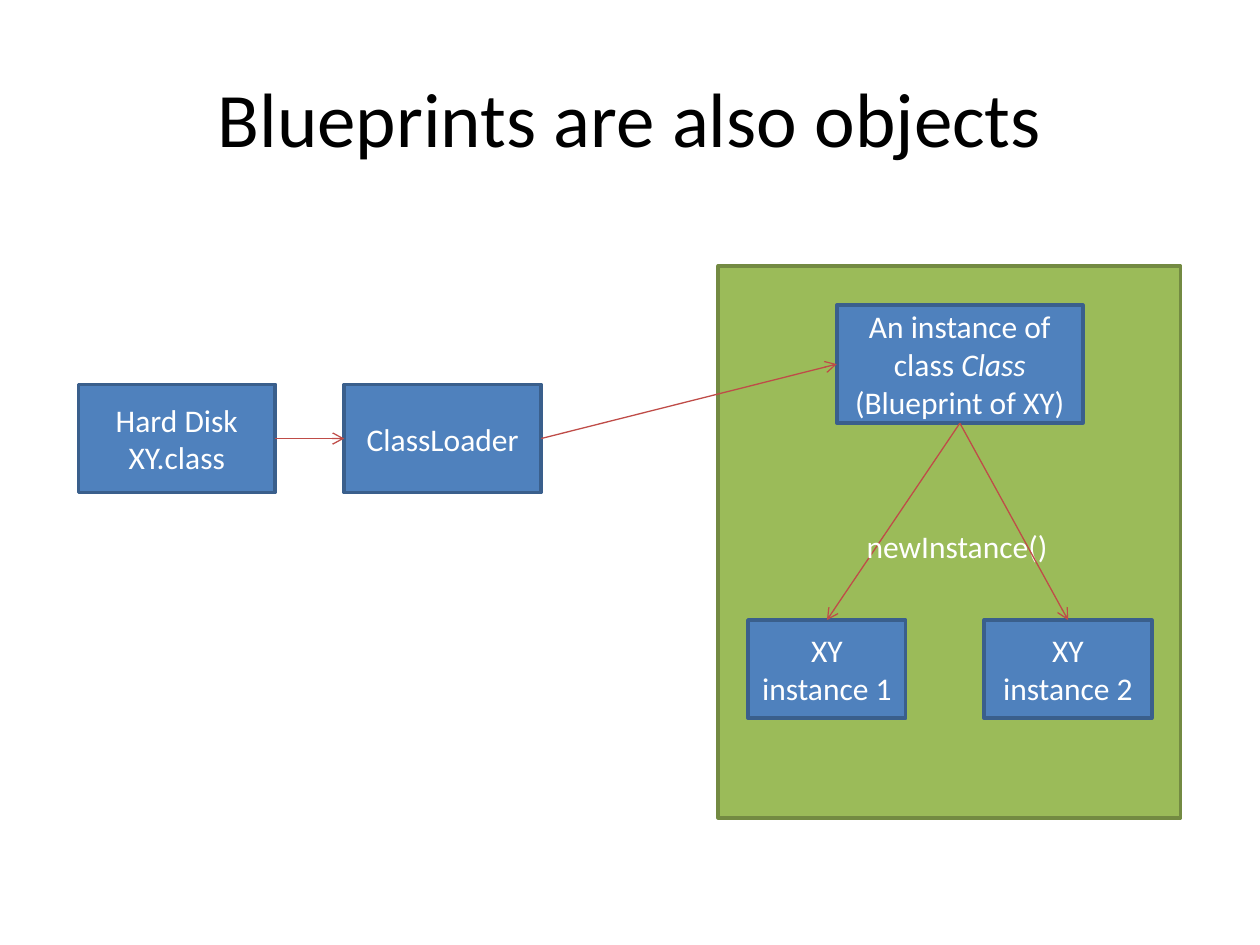
from dataclasses import dataclass

from lxml.etree import SubElement
from pptx import Presentation
from pptx.dml.color import RGBColor
from pptx.enum.shapes import MSO_CONNECTOR, MSO_SHAPE
from pptx.enum.text import MSO_ANCHOR, PP_ALIGN
from pptx.oxml.ns import qn
from pptx.shapes.autoshape import Shape
from pptx.slide import Slide
from pptx.util import Cm, Pt

FONT = "Calibri"
COLORS = {
    "title": "000000",
    "text": "FFFFFF",
    "box": "4F81BD",
    "box_line": "3A5F8C",
    "panel": "9BBB59",
    "panel_line": "738A42",
    "arrow": "BF4C48",
}
TOP, LEFT, BOTTOM, RIGHT = range(4)


@dataclass(frozen=True)
class Area:
    """A rectangle in centimetres."""
    left: float
    top: float
    width: float
    height: float

    def lengths(self) -> tuple[Cm, Cm, Cm, Cm]:
        return Cm(self.left), Cm(self.top), Cm(self.width), Cm(self.height)


@dataclass(frozen=True)
class Box:
    name: str
    area: Area
    text: str


@dataclass(frozen=True)
class Arrow:
    start: str
    start_side: int
    end: str
    end_side: int


TITLE_AREA = Area(1.27, 0.76, 22.86, 3.18)
PANEL_AREA = Area(14.48, 5.36, 9.32, 11.13)
LABEL_AREA = Area(17.22, 10.49, 4.22, 1.02)
BOXES = [
    Box("disk", Area(1.58, 7.75, 3.97, 2.18), "Hard Disk\nXY.class"),
    Box("loader", Area(6.94, 7.75, 3.97, 2.18), "ClassLoader"),
    Box("blueprint", Area(16.87, 6.15, 4.96, 2.38),
        "An instance of class *Class*\n(Blueprint of XY)"),
    Box("first", Area(15.08, 12.5, 3.18, 1.98), "XY instance 1"),
    Box("second", Area(19.84, 12.5, 3.38, 1.98), "XY instance 2"),
]
LOADING_ARROWS = [
    Arrow("disk", RIGHT, "loader", LEFT),
    Arrow("loader", RIGHT, "blueprint", LEFT),
]
FIRST_ARROW = Arrow("blueprint", BOTTOM, "first", TOP)
SECOND_ARROW = Arrow("blueprint", BOTTOM, "second", TOP)


def color(name: str) -> RGBColor:
    return RGBColor.from_string(COLORS[name])


def write_text(shape: Shape, text: str, *, size: float = 18,
               color_name: str = "text", align: PP_ALIGN = PP_ALIGN.CENTER,
               anchor: MSO_ANCHOR = MSO_ANCHOR.MIDDLE, wrap: bool = True) -> None:
    """Write one paragraph per line; words between asterisks are italic."""
    frame = shape.text_frame
    frame.word_wrap = wrap
    frame.vertical_anchor = anchor
    for index, line in enumerate(text.split("\n")):
        paragraph = frame.add_paragraph() if index else frame.paragraphs[0]
        paragraph.alignment = align
        for part_index, part in enumerate(line.split("*")):
            if not part:
                continue
            run = paragraph.add_run()
            run.text = part
            run.font.name = FONT
            run.font.size = Pt(size)
            run.font.italic = part_index % 2 == 1
            run.font.color.rgb = color(color_name)


def add_rectangle(slide: Slide, area: Area, fill: str, line: str) -> Shape:
    shape = slide.shapes.add_shape(MSO_SHAPE.RECTANGLE, *area.lengths())
    shape.shadow.inherit = False
    shape.fill.solid()
    shape.fill.fore_color.rgb = color(fill)
    shape.line.color.rgb = color(line)
    shape.line.width = Pt(2)
    return shape


def add_box(slide: Slide, box: Box) -> Shape:
    shape = add_rectangle(slide, box.area, "box", "box_line")
    write_text(shape, box.text)
    return shape


def add_arrow(slide: Slide, arrow: Arrow, shapes: dict[str, Shape]) -> None:
    connector = slide.shapes.add_connector(MSO_CONNECTOR.STRAIGHT, 0, 0, 0, 0)
    connector.begin_connect(shapes[arrow.start], arrow.start_side)
    connector.end_connect(shapes[arrow.end], arrow.end_side)
    connector.line.color.rgb = color("arrow")
    connector.line.width = Pt(0.75)
    SubElement(connector.line._get_or_add_ln(), qn("a:tailEnd"), type="arrow")
    SubElement(connector._element.spPr, qn("a:effectLst"))


def main() -> None:
    presentation = Presentation()
    presentation.slide_width = Cm(25.4)
    presentation.slide_height = Cm(19.05)
    slide = presentation.slides.add_slide(presentation.slide_layouts[6])

    title = slide.shapes.add_textbox(*TITLE_AREA.lengths())
    write_text(title, "Blueprints are also objects", size=44, color_name="title")

    add_rectangle(slide, PANEL_AREA, "panel", "panel_line")
    shapes = {box.name: add_box(slide, box) for box in BOXES}
    for arrow in [*LOADING_ARROWS, FIRST_ARROW]:
        add_arrow(slide, arrow, shapes)

    label = slide.shapes.add_textbox(*LABEL_AREA.lengths())
    write_text(label, "newInstance()", align=PP_ALIGN.LEFT,
               anchor=MSO_ANCHOR.TOP, wrap=False)
    add_arrow(slide, SECOND_ARROW, shapes)

    presentation.save("out.pptx")


if __name__ == "__main__":
    main()
